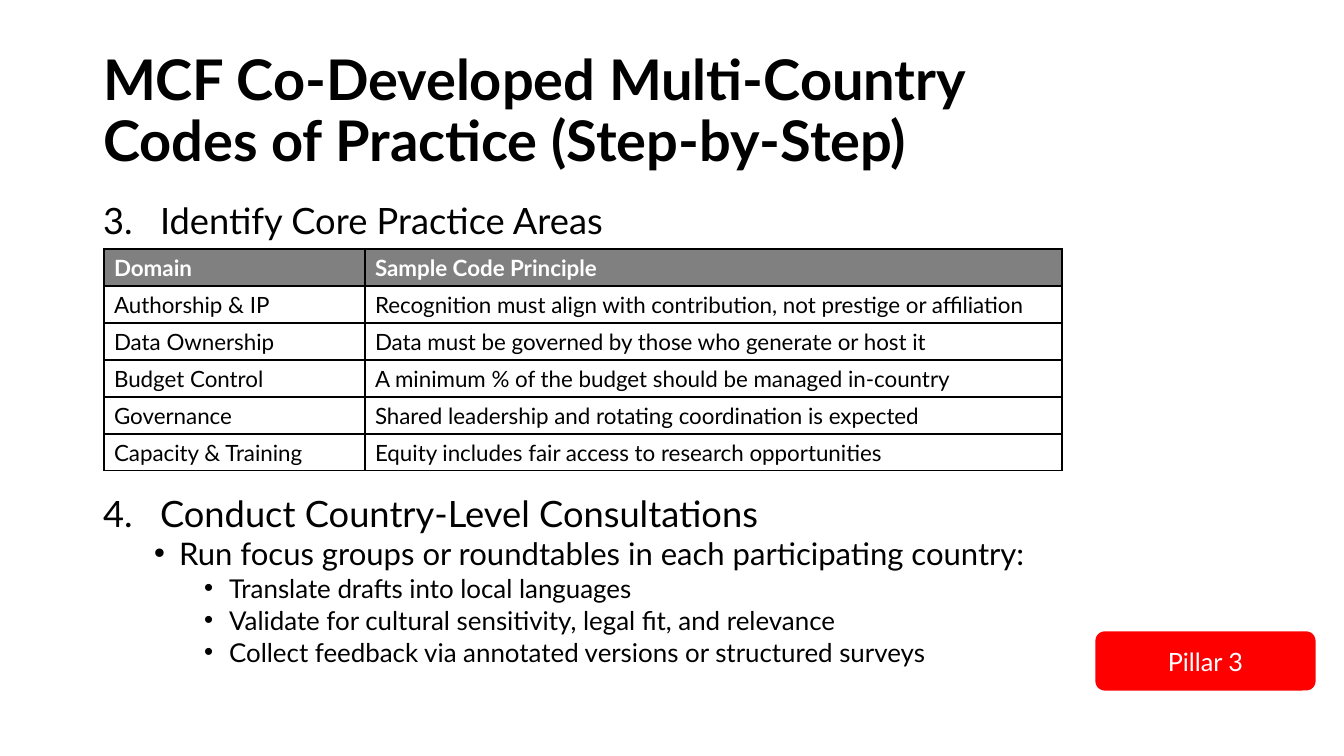
from lxml import etree
from pptx import Presentation
from pptx.dml.color import RGBColor
from pptx.enum.shapes import MSO_SHAPE
from pptx.enum.text import MSO_ANCHOR, MSO_AUTO_SIZE, PP_ALIGN
from pptx.oxml.ns import qn
from pptx.util import Pt

ROUND = MSO_SHAPE.ROUNDED_RECTANGLE
MIDDLE, TOP = MSO_ANCHOR.MIDDLE, MSO_ANCHOR.TOP
LEFT, CENTER = PP_ALIGN.LEFT, PP_ALIGN.CENTER
NO_FIT = MSO_AUTO_SIZE.NONE
FONT = "Lato"
BLACK, WHITE, GRAY, RED = "000000", "FFFFFF", "808080", "FF0000"

ROWS = [
    ("Domain", "Sample Code Principle"),
    ("Authorship & IP",
     "Recognition must align with contribution, not prestige or affiliation"),
    ("Data Ownership", "Data must be governed by those who generate or host it"),
    ("Budget Control", "A minimum % of the budget should be managed in-country"),
    ("Governance", "Shared leadership and rotating coordination is expected"),
    ("Capacity & Training",
     "Equity includes fair access to research opportunities"),
]
# text, level, step number, space before in points
STEPS = [
    ("Identify Core Practice Areas", 0, 3, 0),
    ("Conduct Country-Level Consultations", 0, 4, 184.4),
    ("Run focus groups or roundtables in each participating country:", 1, None, 5),
    ("Translate drafts into local languages", 2, None, 5),
    ("Validate for cultural sensitivity, legal fit, and relevance", 2, None, 5),
    ("Collect feedback via annotated versions or structured surveys", 2, None, 5),
]
SIZES = [25.9, 22.2, 18.5]
INDENTS = [(57, 57), (76, 25), (126, 25)]  # left margin and hang, in px


def px(n):
    return round(n * 914400 / 100.8)


def color(code):
    return RGBColor.from_string(code)


def style(para, size, code=BLACK, bold=False):
    for run in para.runs:
        font = run.font
        font.name, font.size, font.bold = FONT, Pt(size), bold
        font.color.rgb = color(code)


def place(shape, left, top, width, height):
    shape.left, shape.top = px(left), px(top)
    shape.width, shape.height = px(width), px(height)


def add_title(slide, text):
    title = slide.shapes.title
    place(title, 93, 40, 909, 146)
    frame = title.text_frame
    frame.text = text
    frame.auto_size, frame.vertical_anchor = NO_FIT, MIDDLE
    para = frame.paragraphs[0]
    para.alignment, para.line_spacing = LEFT, 0.9
    style(para, 40, bold=True)


def add_mark(para, level, step):
    """Give a paragraph its indent and its number or bullet."""
    props = para._p.get_or_add_pPr()
    margin, hang = INDENTS[level]
    props.set("marL", str(px(margin)))
    props.set("indent", str(-px(hang)))
    face = "Arial" if step is None else FONT
    etree.SubElement(props, qn("a:buFont"), typeface=face)
    if step is None:
        etree.SubElement(props, qn("a:buChar"), char="•")
    else:
        etree.SubElement(props, qn("a:buAutoNum"),
                         type="arabicPeriod", startAt=str(step))


def add_steps(slide, steps):
    body = slide.placeholders[1]
    place(body, 93, 202, 1159, 480)
    frame = body.text_frame
    frame.text = "\n".join(step[0] for step in steps)
    frame.auto_size, frame.vertical_anchor = NO_FIT, TOP
    for para, (_, level, step, gap) in zip(frame.paragraphs, steps):
        para.level = level
        add_mark(para, level, step)
        para.line_spacing = 0.8
        para.space_before, para.space_after = Pt(gap), Pt(0)
        style(para, SIZES[level])


def add_border(cell):
    props = cell._tc.get_or_add_tcPr()
    for side in ("lnL", "lnR", "lnT", "lnB"):
        line = etree.SubElement(props, qn("a:" + side), w=str(Pt(1)))
        fill = etree.SubElement(line, qn("a:solidFill"))
        etree.SubElement(fill, qn("a:srgbClr"), val=BLACK)


def fill_cell(cell, text, head):
    cell.text = text
    cell.vertical_anchor = MIDDLE
    style(cell.text_frame.paragraphs[0], 16, WHITE if head else BLACK, head)
    add_border(cell)
    if head:
        cell.fill.solid()
        cell.fill.fore_color.rgb = color(GRAY)
    else:
        cell.fill.background()


def add_grid(slide, rows, widths, height):
    frame = slide.shapes.add_table(
        len(rows), len(widths), px(104), px(249),
        px(sum(widths)), px(height * len(rows)))
    table = frame.table
    table.horz_banding = False
    for col, width in zip(table.columns, widths):
        col.width = px(width)
    for r, row in enumerate(rows):
        table.rows[r].height = px(height)
        for c, text in enumerate(row):
            fill_cell(table.cell(r, c), text, r == 0)


def add_badge(slide, text):
    badge = slide.shapes.add_shape(ROUND, px(1094), px(630), px(223), px(62))
    badge.shadow.inherit = False
    badge.fill.solid()
    badge.fill.fore_color.rgb = color(RED)
    badge.line.color.rgb = color(WHITE)
    badge.line.width = Pt(2)
    frame = badge.text_frame
    frame.text = text
    frame.vertical_anchor = MIDDLE
    para = frame.paragraphs[0]
    para.alignment = CENTER
    style(para, 18, WHITE)


def main():
    deck = Presentation()
    deck.slide_width, deck.slide_height = px(1344), px(756)
    slide = deck.slides.add_slide(deck.slide_layouts[1])
    add_title(slide, "MCF Co-Developed Multi-Country Codes of Practice (Step-by-Step)")
    add_steps(slide, STEPS)
    add_grid(slide, ROWS, (261, 697), 37)
    add_badge(slide, "Pillar 3")
    deck.save("out.pptx")


if __name__ == "__main__":
    main()
